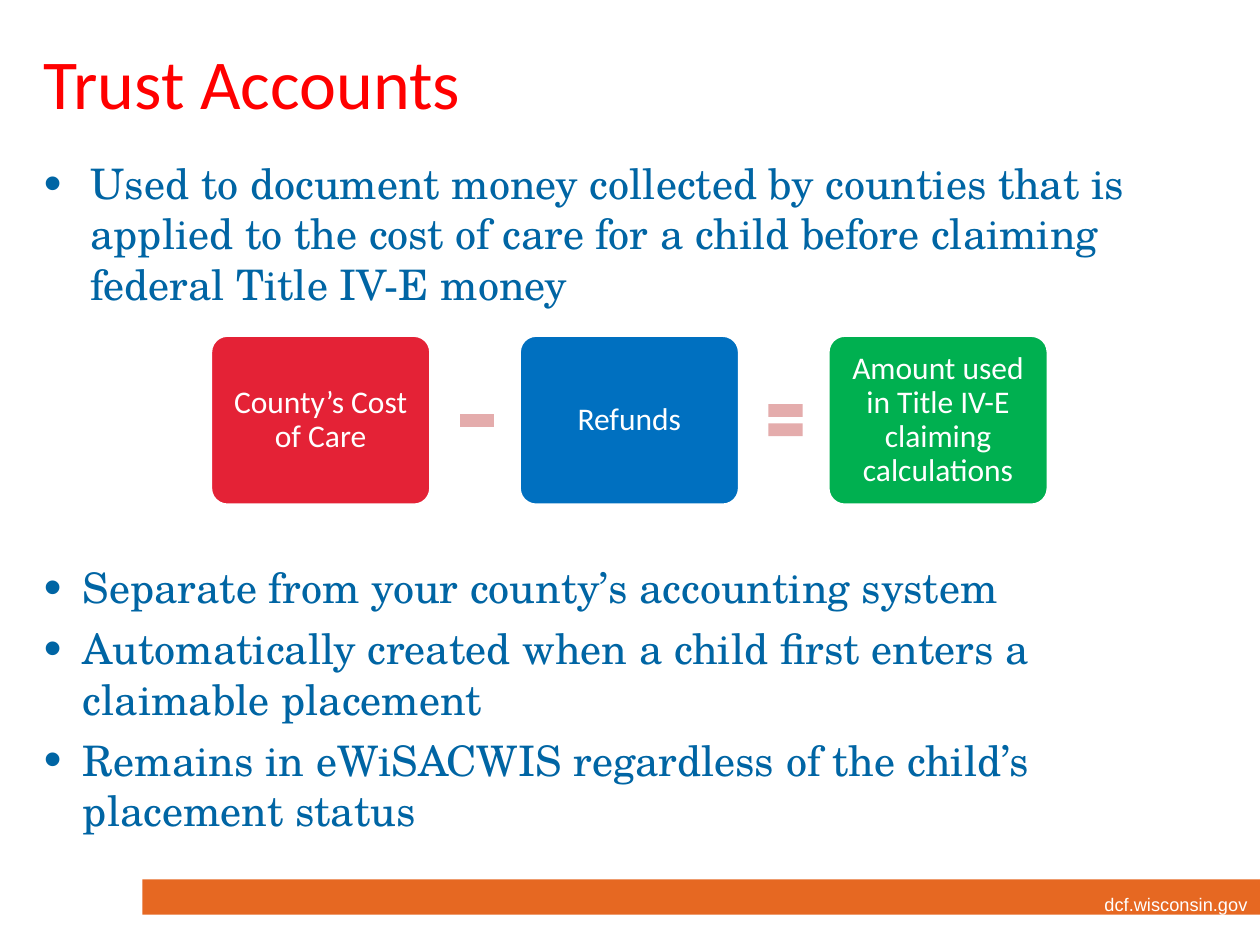
from lxml import etree
from pptx import Presentation, util as u
from pptx.dml.color import RGBColor
from pptx.enum import shapes, text
from pptx.oxml import ns

RED = RGBColor(0xFF, 0x00, 0x00)
NAVY = RGBColor(0x00, 0x65, 0xA4)
ORANGE = RGBColor(0xE6, 0x68, 0x22)
CRIMSON = RGBColor(0xE4, 0x22, 0x36)
BLUE = RGBColor(0x00, 0x70, 0xC0)
GREEN = RGBColor(0x00, 0xB0, 0x50)
PINK = RGBColor(0xE4, 0xAC, 0xAC)
WHITE = RGBColor(0xFF, 0xFF, 0xFF)


def write(paragraph, words, *, font, size, color, align=text.PP_ALIGN.LEFT,
          line=1.0, after=0, hang=None, baseline=None):
    paragraph.alignment = align
    paragraph.line_spacing = line
    paragraph.space_after = u.Pt(after)
    if hang:
        props = paragraph._p.get_or_add_pPr()
        props.set("marL", str(u.Inches(hang)))
        props.set("indent", str(-u.Inches(hang)))
        for tag, key, value in (("a:buSzPct", "val", "120000"),
                                ("a:buFont", "typeface", "Arial"),
                                ("a:buChar", "char", "•")):
            etree.SubElement(props, ns.qn(tag)).set(key, value)
    run = paragraph.add_run()
    run.text = words
    run.font.name = font
    run.font.size = u.Pt(size)
    run.font.color.rgb = color
    if baseline:
        run._r.get_or_add_rPr().set("baseline", str(baseline * 1000))


class Deck:
    heading_font = "Calibri"
    body_font = "TeX Gyre Schola"
    footer_font = "Arial"

    def __init__(self, width, height):
        self.presentation = Presentation()
        self.presentation.slide_width = u.Inches(width)
        self.presentation.slide_height = u.Inches(height)
        self.slide = self.presentation.slides.add_slide(
            self.presentation.slide_layouts[6])

    def textbox(self, *place, anchor=text.MSO_ANCHOR.TOP):
        frame = self.slide.shapes.add_textbox(*map(u.Inches, place)).text_frame
        frame.word_wrap = True
        frame.vertical_anchor = anchor
        return frame

    def shape(self, preset, fill, *place):
        figure = self.slide.shapes.add_shape(preset, *map(u.Inches, place))
        figure.shadow.inherit = False
        figure.fill.solid()
        figure.fill.fore_color.rgb = fill
        figure.line.fill.background()
        return figure

    def title(self, words, *place):
        frame = self.textbox(*place, anchor=text.MSO_ANCHOR.MIDDLE)
        write(frame.paragraphs[0], words, font=self.heading_font, size=40, color=RED)

    def bullets(self, items, hang, *place):
        frame = self.textbox(*place)
        for index, words in enumerate(items):
            paragraph = frame.add_paragraph() if index else frame.paragraphs[0]
            write(paragraph, words, font=self.body_font, size=24, color=NAVY,
                  hang=hang, after=6)

    def footer(self, words, *place):
        frame = self.textbox(*place)
        write(frame.paragraphs[0], words, font=self.footer_font, size=18,
              color=WHITE, align=text.PP_ALIGN.RIGHT, baseline=30)

    def card(self, words, fill, *place):
        card = self.shape(shapes.MSO_SHAPE.ROUNDED_RECTANGLE, fill, *place)
        card.adjustments[0] = 0.1
        card.line.color.rgb = WHITE
        card.line.width = u.Pt(2)
        frame = card.text_frame
        frame.word_wrap = True
        frame.vertical_anchor = text.MSO_ANCHOR.MIDDLE
        frame.margin_left = frame.margin_right = u.Inches(0.07)
        frame.margin_top = frame.margin_bottom = u.Inches(0.07)
        write(frame.paragraphs[0], words, font=self.heading_font, size=18,
              color=WHITE, align=text.PP_ALIGN.CENTER, line=0.9)

    def equation(self, terms, operators, left, top, pitch):
        for index, (words, fill) in enumerate(terms):
            self.card(words, fill, left + index * pitch, top, 1.75, 1.35)
        for index, operator in enumerate(operators):
            self.shape(operator, PINK, left + 1.93 + index * pitch, top + 0.46,
                       0.37, 0.43)


def main():
    deck = Deck(10, 7.5)
    deck.bullets([
        "Used to document money collected by counties that is applied to the "
        "cost of care for a child before claiming federal Title IV-E money",
    ], 0.37, 0.25, 1.2, 9.38, 1.4)
    deck.bullets([
        "Separate from your county’s accounting system",
        "Automatically created when a child first enters a claimable placement",
        "Remains in eWiSACWIS regardless of the child’s placement status",
    ], 0.31, 0.25, 4.41, 9.38, 2.33)
    deck.shape(shapes.MSO_SHAPE.RECTANGLE, ORANGE, 1.13, 6.98, 8.87, 0.28)
    deck.footer("dcf.wisconsin.gov", 7.33, 7.01, 2.67, 0.3)
    deck.title("Trust Accounts", 0.25, 0.14, 9.66, 1.02)
    deck.equation(
        [("County’s Cost of Care", CRIMSON),
         ("Refunds", BLUE),
         ("Amount used in Title IV-E claiming calculations", GREEN)],
        [shapes.MSO_SHAPE.MATH_MINUS, shapes.MSO_SHAPE.MATH_EQUAL],
        left=1.67, top=2.66, pitch=2.45)
    deck.presentation.save("out.pptx")


if __name__ == "__main__":
    main()
